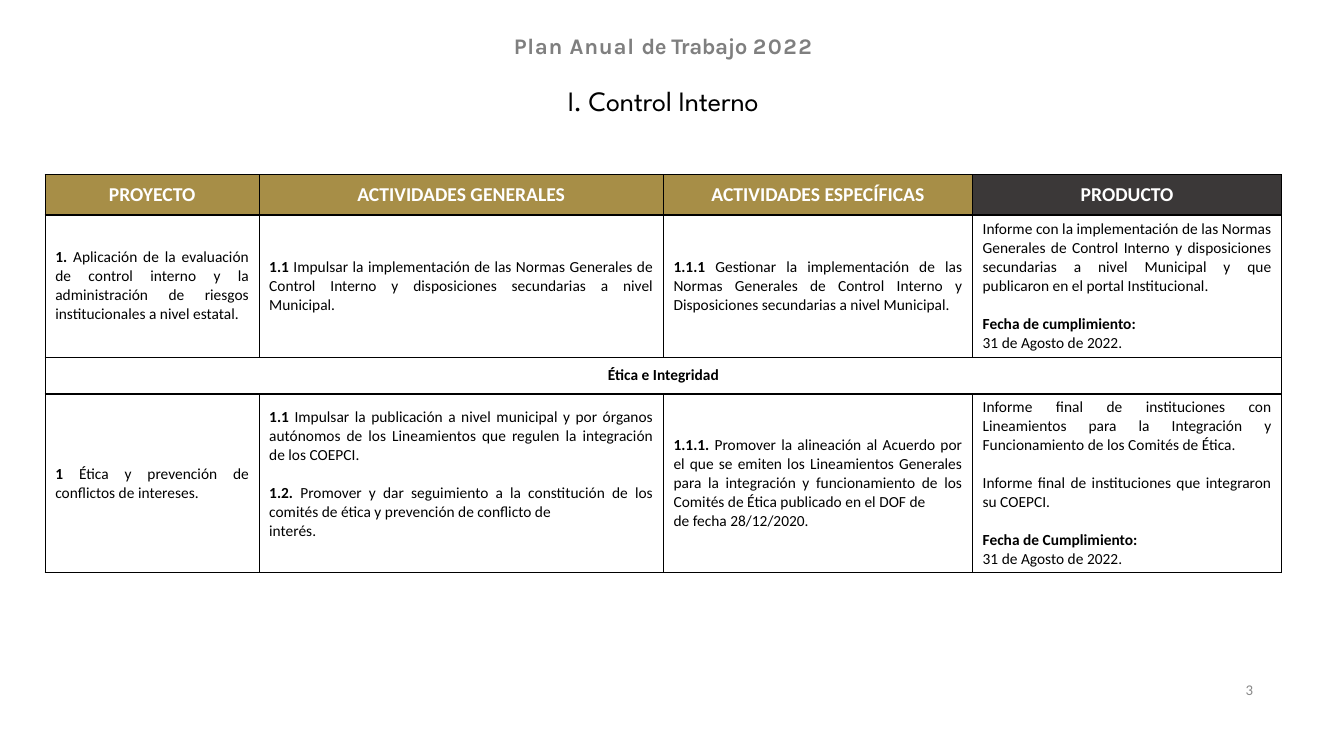
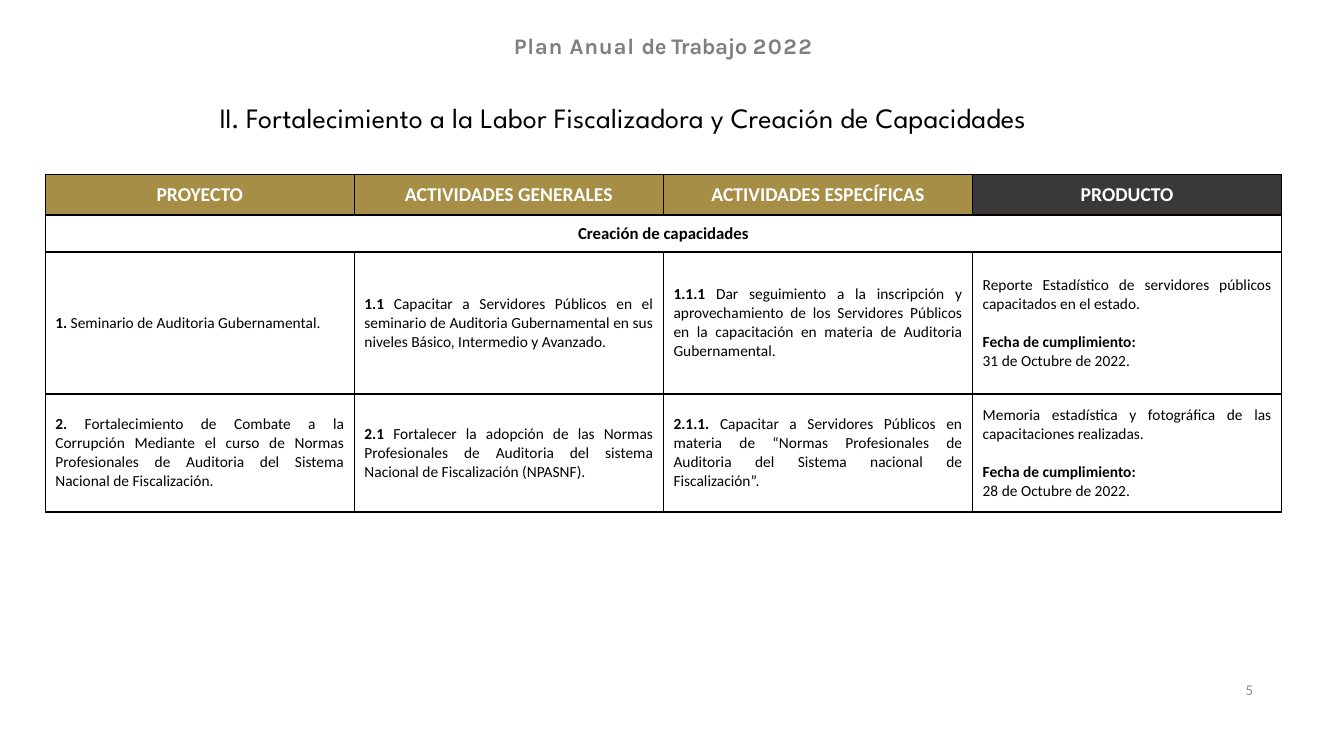
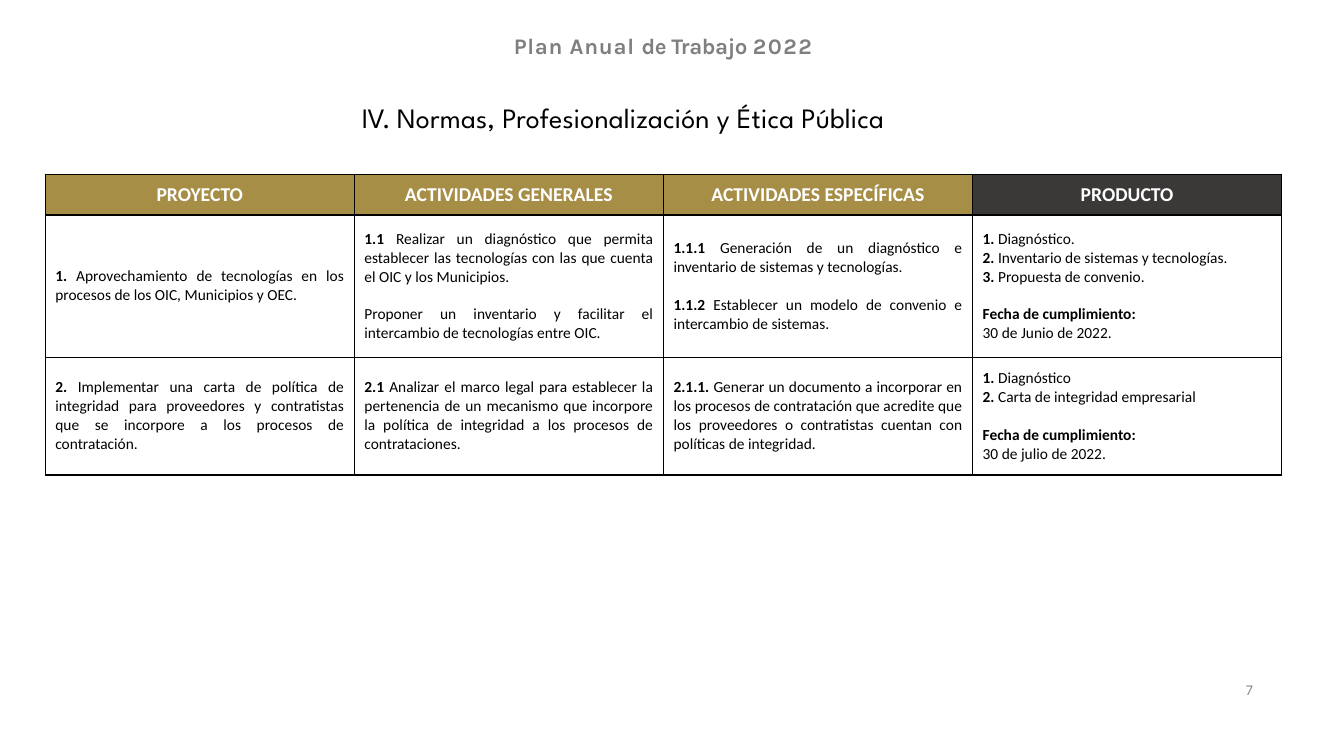
from lxml.etree import SubElement
from pptx import Presentation
from pptx.dml.color import RGBColor
from pptx.enum.text import MSO_ANCHOR, MSO_AUTO_SIZE, PP_ALIGN
from pptx.oxml.ns import qn
from pptx.util import Cm, Pt

COLORS = {"gold": "A78E47", "dark": "3B3838", "gray": "7F7F7F",
          "number": "898989", "black": "000000", "white": "FFFFFF"}
FORMATS = {
    "heading": {"name": "Karla", "size": Pt(15.9), "bold": True, "color": "gray"},
    "title": {"name": "League Spartan", "size": Pt(20), "bold": False, "color": "black"},
    "number": {"name": "Calibri", "size": Pt(10.6), "bold": False, "color": "number"},
    "header": {"name": "Calibri", "size": Pt(14), "bold": True, "color": "white"},
    "body": {"name": "Calibri", "size": Pt(11), "bold": False, "color": "black"},
}
HEADERS = ["PROYECTO", "ACTIVIDADES GENERALES", "ACTIVIDADES ESPECÍFICAS", "PRODUCTO"]
EQUAL_COLS = [7.79] * 4
HEADER_H, SECTION_H, TALL_H, SHORT_H = 1.02, 0.93, 3.58, 2.97
BLANK_LINE = Pt(13.4)


class Deck:
    def __init__(self):
        self.prs = Presentation()
        self.prs.slide_width, self.prs.slide_height = Cm(33.87), Cm(19.05)
        self.s = None

    def run(self, p, text, style, spacing=0, **changes):
        r = p.add_run()
        r.text = text
        for key, value in {**FORMATS[style], **changes}.items():
            if key == "color":
                r.font.color.rgb = RGBColor.from_string(COLORS[value])
            else:
                setattr(r.font, key, value)
        if spacing:
            r.font._element.set("spc", str(round(spacing * 100)))

    def line(self, sp, box, parts, style, **frame):
        """Place a shape and fill it with one line of (text, letter spacing) parts."""
        sp.left, sp.top, sp.width, sp.height = (Cm(v) for v in box)
        tf = sp.text_frame
        settings = {"margin_left": 0, "margin_right": 0, "margin_top": Cm(0.03),
                    "margin_bottom": 0, "word_wrap": True,
                    "auto_size": MSO_AUTO_SIZE.NONE, **frame}
        for key, value in settings.items():
            setattr(tf, key, value)
        for text, spacing in parts:
            self.run(tf.paragraphs[0], text, style, spacing)
        return tf.paragraphs[0]

    def slide(self, numeral, title, spacing, title_box, number):
        self.s = self.prs.slides.add_slide(self.prs.slide_layouts[5])
        self.line(self.s.shapes.add_textbox(0, 0, 0, 0), (12.95, 0.78, 7.62, 0.71),
                  [("Plan Anual ", 0.5), ("de Trabajo ", -0.3), ("2022", 1.1)], "heading")
        p = self.line(self.s.shapes.title, title_box,
                      [(numeral + " ", -0.5), (title, spacing)], "title",
                      vertical_anchor=MSO_ANCHOR.MIDDLE)
        p.alignment = PP_ALIGN.CENTER
        self.line(self.s.shapes.add_textbox(0, 0, 0, 0), (31.39, 17.12, 0.6, 0.6),
                  [(number, 0)], "number")

    def cell(self, cell, text, style, align, fill=None, **changes):
        """Fill a cell: *bold*, newline for a paragraph, double newline for a gap."""
        cell.vertical_anchor = MSO_ANCHOR.MIDDLE
        cell.margin_top = cell.margin_bottom = Cm(0.1)
        p = cell.text_frame.paragraphs[0]
        gap = False
        for i, line in enumerate(text.split("\n")):
            if not line:
                gap = True
                continue
            if i:
                p = cell.text_frame.add_paragraph()
            if gap:
                p.space_before = BLANK_LINE
            gap = False
            p.alignment = align
            for j, part in enumerate(line.split("*")):
                if part:
                    bold = {"bold": True} if j % 2 else {}
                    self.run(p, part, style, **bold, **changes)
        self.borders(cell)
        if fill:
            cell.fill.solid()
            cell.fill.fore_color.rgb = RGBColor.from_string(COLORS[fill])
        else:
            cell.fill.background()

    def borders(self, cell):
        tc_pr = cell._tc.get_or_add_tcPr()
        for side in ("lnL", "lnR", "lnT", "lnB"):
            ln = SubElement(tc_pr, qn("a:" + side), w=str(Pt(1)))
            SubElement(SubElement(ln, qn("a:solidFill")), qn("a:srgbClr"),
                       val=COLORS["black"])

    def table(self, cols, rows):
        """Rows are (height, texts); a single text is a section title across the table."""
        heights = [HEADER_H] + [height for height, _ in rows]
        table = self.s.shapes.add_table(len(heights), len(cols), Cm(1.14), Cm(4.4),
                                        Cm(sum(cols)), Cm(sum(heights))).table
        table.horz_banding = False
        for col, width in zip(table.columns, cols):
            col.width = Cm(width)
        for row, height in zip(table.rows, heights):
            row.height = Cm(height)
        for c, text in enumerate(HEADERS):
            fill = "dark" if text == "PRODUCTO" else "gold"
            self.cell(table.cell(0, c), text, "header", PP_ALIGN.CENTER, fill)
        for r, (_, texts) in enumerate(rows, 1):
            section = len(texts) == 1
            align = PP_ALIGN.CENTER if section else PP_ALIGN.JUSTIFY
            changes = {"size": Pt(12 if r == 1 else 11)} if section else {}
            for c in range(len(cols)):
                text = texts[c] if c < len(texts) else ""
                self.cell(table.cell(r, c), text, "body", align, **changes)
            if section:
                table.cell(r, 0).merge(table.cell(r, len(cols) - 1))
        return table


def main():
    deck = Deck()
    wide_title = (4.47, 2.06, 22.48, 1.75)

    deck.slide("I.", "Control Interno", -0.1, (8.74, 2.06, 15.95, 0.89), "3")
    table = deck.table([5.39, 10.19, 7.79, 7.79], [
        (TALL_H, [
            "*1. *Aplicación de la evaluación de control interno y la administración de "
            "riesgos institucionales a nivel estatal.",
            "*1.1* Impulsar la implementación de las Normas Generales de Control Interno y "
            "disposiciones secundarias a nivel Municipal.",
            "*1.1.1 *Gestionar la implementación de las Normas Generales de Control Interno "
            "y Disposiciones secundarias a nivel Municipal.",
            "Informe con la implementación de las Normas Generales de Control Interno y "
            "disposiciones secundarias a nivel Municipal y que publicaron en el portal "
            "Institucional.\n\n*Fecha de cumplimiento:*\n31 de Agosto de 2022."]),
        (SECTION_H, ["*Ética e Integridad*"]),
        (4.46, [
            "*1 *Ética y prevención de conflictos de intereses.",
            "*1.1 *Impulsar la publicación a nivel municipal y por órganos autónomos de los "
            "Lineamientos que regulen la integración de los COEPCI.\n\n"
            "*1.2. *Promover y dar seguimiento a la constitución de los comités de ética y "
            "prevención de conflicto de\ninterés.",
            "*1.1.1. *Promover la alineación al Acuerdo por el que se emiten los Lineamientos "
            "Generales para la integración y funcionamiento de los Comités de Ética "
            "publicado en el DOF de\nde fecha 28/12/2020.",
            "Informe final de instituciones con Lineamientos para la Integración y "
            "Funcionamiento de los Comités de Ética.\n\n"
            "Informe final de instituciones que integraron su COEPCI.\n\n"
            "*Fecha de Cumplimiento:*\n31 de Agosto de 2022."]),
    ])
    table.cell(3, 1).margin_bottom = Cm(0.58)

    deck.slide("II.", "Fortalecimiento a la Labor Fiscalizadora y Creación de Capacidades",
               0.1, wide_title, "5")
    deck.table(EQUAL_COLS, [
        (SECTION_H, ["*Creación de capacidades*"]),
        (TALL_H, [
            "*1.* Seminario de Auditoria Gubernamental.",
            "*1.1 *Capacitar a Servidores Públicos en el seminario de Auditoria Gubernamental "
            "en sus niveles Básico, Intermedio y Avanzado.",
            "*1.1.1 *Dar seguimiento a la inscripción y aprovechamiento de los Servidores "
            "Públicos en la capacitación en materia de Auditoria Gubernamental.",
            "Reporte Estadístico de servidores públicos capacitados en el estado.\n\n"
            "*Fecha de cumplimiento:*\n31 de Octubre de 2022."]),
        (SHORT_H, [
            "*2.* Fortalecimiento de Combate a la Corrupción Mediante el curso de Normas "
            "Profesionales de Auditoria del Sistema Nacional de Fiscalización.",
            "*2.1 *Fortalecer la adopción de las Normas Profesionales de Auditoria del "
            "sistema Nacional de Fiscalización (NPASNF).",
            "*2.1.1. *Capacitar a Servidores Públicos en materia de “Normas Profesionales de "
            "Auditoria del Sistema nacional de Fiscalización”.",
            "Memoria estadística y fotográfica de las capacitaciones realizadas.\n\n"
            "*Fecha de cumplimiento:*\n28 de Octubre de 2022."]),
    ])

    deck.slide("IV.", "Normas, Profesionalización y Ética Pública", 0.1, wide_title, "7")
    deck.table(EQUAL_COLS, [
        (TALL_H, [
            "*1. *Aprovechamiento de tecnologías en los procesos de los OIC, Municipios y OEC.",
            "*1.1 *Realizar un diagnóstico que permita establecer las tecnologías con las que "
            "cuenta el OIC y los Municipios.\n\n"
            "Proponer un inventario y facilitar el intercambio de tecnologías entre OIC.",
            "*1.1.1 *Generación de un diagnóstico e inventario de sistemas y tecnologías.\n\n"
            "*1.1.2 *Establecer un modelo de convenio e intercambio de sistemas.",
            "*1. *Diagnóstico.\n*2. *Inventario de sistemas y tecnologías.\n"
            "*3. *Propuesta de convenio.\n\n"
            "*Fecha de cumplimiento:*\n30 de Junio de 2022."]),
        (SHORT_H, [
            "*2. *Implementar una carta de política de integridad para proveedores y "
            "contratistas que se incorpore a los procesos de contratación.",
            "*2.1* Analizar el marco legal para establecer la pertenencia de un mecanismo que "
            "incorpore la política de integridad a los procesos de contrataciones.",
            "*2.1.1. *Generar un documento a incorporar en los procesos de contratación que "
            "acredite que los proveedores o contratistas cuentan con políticas de integridad.",
            "*1. *Diagnóstico\n*2. *Carta de integridad empresarial\n\n"
            "*Fecha de cumplimiento:*\n30 de julio de 2022."]),
    ])
    deck.prs.save("out.pptx")


if __name__ == "__main__":
    main()
